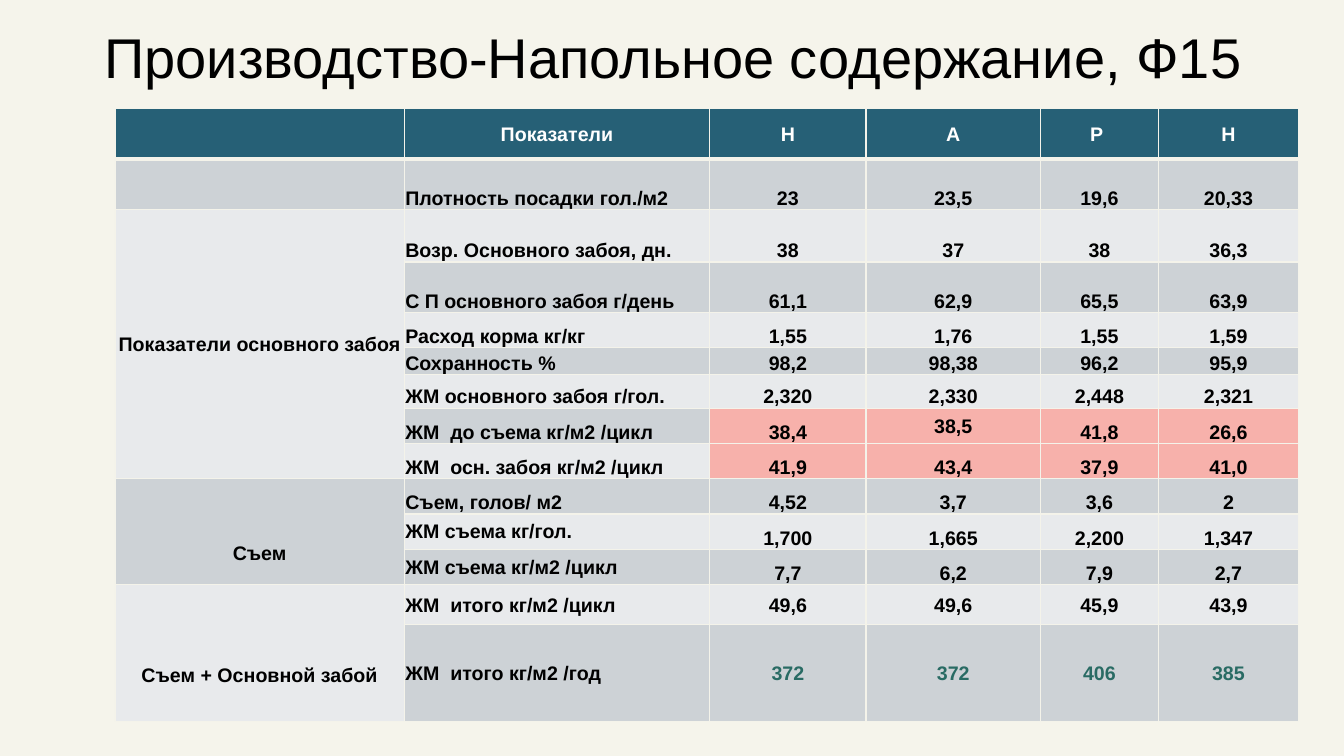
from lxml.etree import SubElement
from pptx import Presentation
from pptx.dml.color import RGBColor
from pptx.enum.text import MSO_ANCHOR as Anchor, PP_ALIGN as Align
from pptx.oxml import parse_xml
from pptx.oxml.ns import nsdecls, qn
from pptx.util import Inches, Pt

FONT = "Arial"
PAPER, BORDER, HEADER = "F5F4EB", "F4F3EA", "266076"
BANDS = ("E8EAEC", "CDD2D6")
RED, GREEN, BLACK, WHITE = "FF0000", "296B64", "000000", "FFFFFF"
RED_OPACITY = 27
COLUMN_WIDTHS = (2.87, 3.03, 1.55, 1.73, 1.17, 1.39)
ROW_HEIGHTS = (0.5, 0.5, 0.52, 0.5, 0.35, 0.27, 0.33, *[0.35] * 5, 0.4, 0.96)
ROWS = (
    ("Показатели", "Н", "А", "Р ", "Н"),
    ("Плотность посадки гол./м2", "23", "23,5", "19,6", "20,33"),
    ("Возр. Основного забоя, дн.", "38", "37", "38", "36,3"),
    ("С П основного забоя г/день", "61,1", "62,9", "65,5", "63,9"),
    ("Расход корма кг/кг", "1,55", "1,76", "1,55", "1,59"),
    ("Сохранность %", "98,2", "98,38", "96,2", "95,9"),
    ("ЖМ основного забоя г/гол.", "2,320", "2,330", "2,448", "2,321"),
    ("ЖМ  до съема кг/м2 /цикл", "38,4", "38,5", "41,8", "26,6"),
    ("ЖМ  осн. забоя кг/м2 /цикл", "41,9", "43,4", "37,9", "41,0"),
    ("Съем, голов/ м2", "4,52", "3,7", "3,6", "2"),
    ("ЖМ съема кг/гол.", "1,700", "1,665", "2,200", "1,347"),
    ("ЖМ съема кг/м2 /цикл", "7,7", "6,2", "7,9", "2,7"),
    ("ЖМ  итого кг/м2 /цикл", "49,6", "49,6", "45,9", "43,9"),
    ("ЖМ  итого кг/м2 /год", "372", "372", "406", "385"),
)
GROUPS = (
    (2, 8, "Показатели основного забоя", 1.0),
    (9, 11, "Съем", 3.0),
    (12, 13, "Съем + Основной забой", 3.0),
)
HIGHLIGHTED_ROWS = (7, 8)
YEAR_ROW = 13
MIDDLE_ROWS = (0, 12, 13)
MIDDLE_CELLS = ((7, 3), (10, 1), (11, 1))


def color(value):
    """Turn a hex string into a colour."""
    return RGBColor.from_string(value)


def add_title(slide, text):
    """Place and format the slide title."""
    title = slide.shapes.title
    title.left, title.top = Inches(0.91), Inches(0.25)
    title.width, title.height = Inches(11.5), Inches(0.83)
    frame = title.text_frame
    frame.text = text
    frame.word_wrap = True
    frame.vertical_anchor = Anchor.TOP
    para = frame.paragraphs[0]
    para.alignment = Align.RIGHT
    para.line_spacing = 0.9
    para.font.name, para.font.size = FONT, Pt(40)
    para.font.color.rgb = color(BLACK)


def fill_cell(cell, value, opacity=100):
    """Fill a cell with a colour, transparent where asked."""
    cell.fill.solid()
    cell.fill.fore_color.rgb = color(value)
    if opacity < 100:
        tint = cell._tc.tcPr.find(f".//{qn('a:srgbClr')}")
        SubElement(tint, qn("a:alpha"), val=str(opacity * 1000))


def border_cell(cell, top, bottom):
    """Draw the four borders of a cell, widths in points."""
    sides = (("L", 1), ("R", 1), ("T", top), ("B", bottom))
    for place, (side, width) in enumerate(sides):
        line = parse_xml(
            f'<a:ln{side} {nsdecls("a")} w="{Pt(width)}"><a:solidFill>'
            f'<a:srgbClr val="{BORDER}"/></a:solidFill></a:ln{side}>'
        )
        cell._tc.get_or_add_tcPr().insert(place, line)


def write_cell(cell, text, ink, anchor, align=Align.CENTER, spacing=None):
    """Write bold text in a cell with narrow margins."""
    cell.margin_left = cell.margin_right = cell.margin_top = Inches(0.01)
    cell.margin_bottom = 0
    cell.vertical_anchor = anchor
    para = cell.text_frame.paragraphs[0]
    if text:
        para.text = text
    para.alignment = align
    para.line_spacing = spacing
    para.font.name, para.font.size, para.font.bold = FONT, Pt(14), True
    para.font.color.rgb = color(ink)


def style_cell(cell, row, column):
    """Give a cell its fill and borders by its place in the table."""
    if row in HIGHLIGHTED_ROWS and column > 1:
        fill_cell(cell, RED, RED_OPACITY)
    else:
        fill_cell(cell, BANDS[row % 2] if row else HEADER)
    border_cell(cell, 3 if row == 1 else 1, 1 if row else 3)


def text_style(row, column):
    """Return the ink, anchor and alignment of a cell."""
    ink = BLACK if row else WHITE
    if row == YEAR_ROW and column > 1:
        ink = GREEN
    middle = row in MIDDLE_ROWS or (row, column) in MIDDLE_CELLS
    align = Align.LEFT if row and column == 1 else Align.CENTER
    return ink, Anchor.MIDDLE if middle else Anchor.BOTTOM, align


def add_indicator_table(slide):
    """Build the table of production indicators."""
    frame = slide.shapes.add_table(
        len(ROWS), len(COLUMN_WIDTHS), Inches(1.14), Inches(1.08),
        Inches(sum(COLUMN_WIDTHS)), Inches(sum(ROW_HEIGHTS)),
    )
    table = frame.table
    table.horz_banding = False
    for column, width in zip(table.columns, COLUMN_WIDTHS):
        column.width = Inches(width)
    for row, height in zip(table.rows, ROW_HEIGHTS):
        row.height = Inches(height)
    for row, texts in enumerate(ROWS):
        for column, text in enumerate(("", *texts)):
            cell = table.cell(row, column)
            style_cell(cell, row, column)
            write_cell(cell, text, *text_style(row, column))
    for first, last, text, spacing in GROUPS:
        cell = table.cell(first, 0)
        cell.merge(table.cell(last, 0))
        fill_cell(cell, BANDS[first == 9])
        write_cell(cell, text, BLACK, Anchor.MIDDLE, spacing=spacing)


def main():
    """Build the slide and save the deck."""
    deck = Presentation()
    deck.slide_width, deck.slide_height = Inches(13.33), Inches(7.5)
    slide = deck.slides.add_slide(deck.slide_layouts[5])
    slide.background.fill.solid()
    slide.background.fill.fore_color.rgb = color(PAPER)
    add_indicator_table(slide)
    add_title(slide, "Производство-Напольное содержание, Ф15")
    deck.save("out.pptx")


if __name__ == "__main__":
    main()
